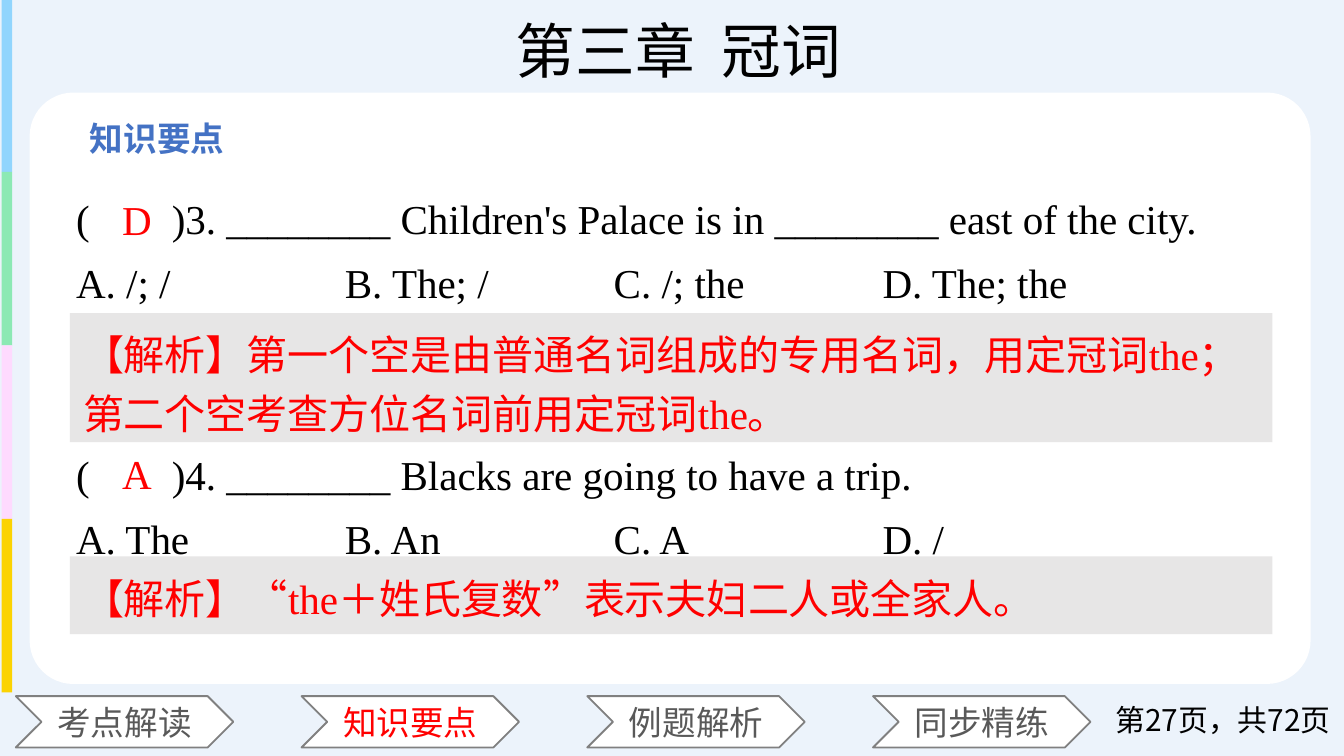
from dataclasses import dataclass

from lxml import etree
from pptx import Presentation
from pptx.dml.color import RGBColor
from pptx.enum.shapes import MSO_SHAPE
from pptx.enum.text import MSO_ANCHOR, MSO_AUTO_SIZE, PP_ALIGN
from pptx.oxml.ns import qn
from pptx.util import Cm, Pt

RECT, ROUNDED, CHEVRON = MSO_SHAPE.RECTANGLE, MSO_SHAPE.ROUNDED_RECTANGLE, MSO_SHAPE.CHEVRON
LEFT, CENTER, RIGHT = PP_ALIGN.LEFT, PP_ALIGN.CENTER, PP_ALIGN.RIGHT
TOP, MIDDLE = MSO_ANCHOR.TOP, MSO_ANCHOR.MIDDLE
SERIF, SANS = "Times New Roman", "Noto Sans CJK SC"

COLORS = {
    "background": "ECF3FB", "card": "FFFFFF", "outline": "808080", "note": "E7E6E6",
    "text": "000000", "muted": "595959", "accent": "FF0000", "heading": "4472C4",
    "blue": "91D5FD", "green": "8CE9B4", "pink": "FEDAFE", "yellow": "FBD302",
}


@dataclass
class Box:
    left: float
    top: float
    width: float
    height: float

    def emu(self) -> tuple:
        return Cm(self.left), Cm(self.top), Cm(self.width), Cm(self.height)


@dataclass
class Style:
    size: float
    font: str = SERIF
    color: str = "text"
    bold: bool = False
    align: PP_ALIGN = LEFT
    anchor: MSO_ANCHOR = TOP
    spacing: float = 1.0


@dataclass
class Question:
    answer: str
    answer_top: float
    stem: str
    options: list[str]
    note: str
    note_box: Box


QUESTIONS = [
    Question("D", 3.56, "(　　)3. ________ Children's Palace is in ________ east of the city.",
             ["A. /; /", "B. The; /", "C. /; the", "D. The; the"],
             "【解析】第一个空是由普通名词组成的专用名词，用定冠词the；第二个空考查方位名词前用定冠词the。",
             Box(1.32, 5.92, 22.73, 2.44)),
    Question("A", 8.36, "(　　)4. ________ Blacks are going to have a trip.",
             ["A. The", "B. An", "C. A", "D. /"],
             "【解析】“the＋姓氏复数”表示夫妇二人或全家人。",
             Box(1.32, 10.52, 22.73, 1.47)),
]
TABS = ["考点解读", "知识要点", "例题解析", "同步精练"]
ACTIVE_TAB = "知识要点"
NOTE_GAP = 68.5
OPTION_STEP = 5.08


def rgb(name: str) -> RGBColor:
    return RGBColor.from_string(COLORS[name])


def add_run(p, text: str, style: Style) -> None:
    r = p.add_run()
    r.text = text
    r.font.size = Pt(style.size)
    r.font.bold = style.bold
    r.font.color.rgb = rgb(style.color)
    r.font.name = style.font
    etree.SubElement(r.font._element, qn("a:ea"), typeface=SANS)


def write(tf, lines: list[str], style: Style) -> list:
    tf.word_wrap = True
    tf.auto_size = MSO_AUTO_SIZE.NONE
    tf.vertical_anchor = style.anchor
    for i, line in enumerate(lines):
        p = tf.add_paragraph() if i else tf.paragraphs[0]
        p.alignment = style.align
        p.line_spacing = style.spacing
        add_run(p, line, style)
    return list(tf.paragraphs)


def add_text(s, box: Box, lines: list[str], style: Style):
    sp = s.shapes.add_textbox(*box.emu())
    write(sp.text_frame, lines, style)
    return sp


def add_block(s, kind: MSO_SHAPE, box: Box, fill: str, line: str | None = None):
    sp = s.shapes.add_shape(kind, *box.emu())
    sp.shadow.inherit = False
    sp.fill.solid()
    sp.fill.fore_color.rgb = rgb(fill)
    if line:
        sp.line.color.rgb = rgb(line)
        sp.line.width = Pt(1)
    else:
        sp.line.fill.background()
    return sp


def add_option_tabs(p, count: int) -> None:
    tabs = etree.SubElement(p._p.get_or_add_pPr(), qn("a:tabLst"))
    for i in range(1, count):
        etree.SubElement(tabs, qn("a:tab"), pos=str(Cm(OPTION_STEP * i)), algn="l")


def add_frame(s) -> None:
    s.background.fill.solid()
    s.background.fill.fore_color.rgb = rgb("background")
    title = s.shapes.title
    title.left, title.top, title.width, title.height = Box(4.47, 0.13, 16.71, 1.63).emu()
    write(title.text_frame, ["第三章  冠词"], Style(32, align=CENTER))
    for i, color in enumerate(["blue", "green", "pink", "yellow"]):
        add_block(s, RECT, Box(0.03, -0.03 + 3.28 * i, 0.2, 3.28), color)
    card = add_block(s, ROUNDED, Box(0.56, 1.75, 24.21, 11.18), "card")
    card.adjustments[0] = 0.074
    for i, label in enumerate(TABS):
        sp = add_block(s, CHEVRON, Box(0.3 + 5.4 * i, 13.16, 4.11, 0.97), "card", "outline")
        color = "accent" if label == ACTIVE_TAB else "muted"
        write(sp.text_frame, [label], Style(18, SANS, color, align=CENTER, anchor=MIDDLE))
    add_text(s, Box(1.45, 2.11, 7.01, 1.02), [ACTIVE_TAB], Style(18, SANS, "heading", True))
    page = add_text(s, Box(20.24, 13.23, 5.16, 0.76), ["第27页，共72页"],
                    Style(16, SANS, align=RIGHT, anchor=MIDDLE))
    page.text_frame.margin_left = 0


def add_questions(s) -> None:
    lines = [line for q in QUESTIONS for line in (q.stem, "\t".join(q.options))]
    sp = add_text(s, Box(1.19, 3.25, 23.22, 9.73), lines, Style(22, spacing=1.3))
    paragraphs = sp.text_frame.paragraphs
    for q, p in zip(QUESTIONS, paragraphs[1::2]):
        add_option_tabs(p, len(q.options))
    for p in paragraphs[2::2]:
        p.space_before = Pt(NOTE_GAP)
    for q in QUESTIONS:
        note = add_block(s, RECT, q.note_box, "note")
        write(note.text_frame, [q.note], Style(22, color="accent", spacing=1.2))
        add_text(s, Box(2.06, q.answer_top, 1.09, 1.19), [q.answer], Style(22, color="accent"))


def main() -> None:
    prs = Presentation()
    prs.slide_width, prs.slide_height = Cm(25.4), Cm(14.29)
    s = prs.slides.add_slide(prs.slide_layouts[5])
    add_frame(s)
    add_questions(s)
    prs.save("out.pptx")


if __name__ == "__main__":
    main()
